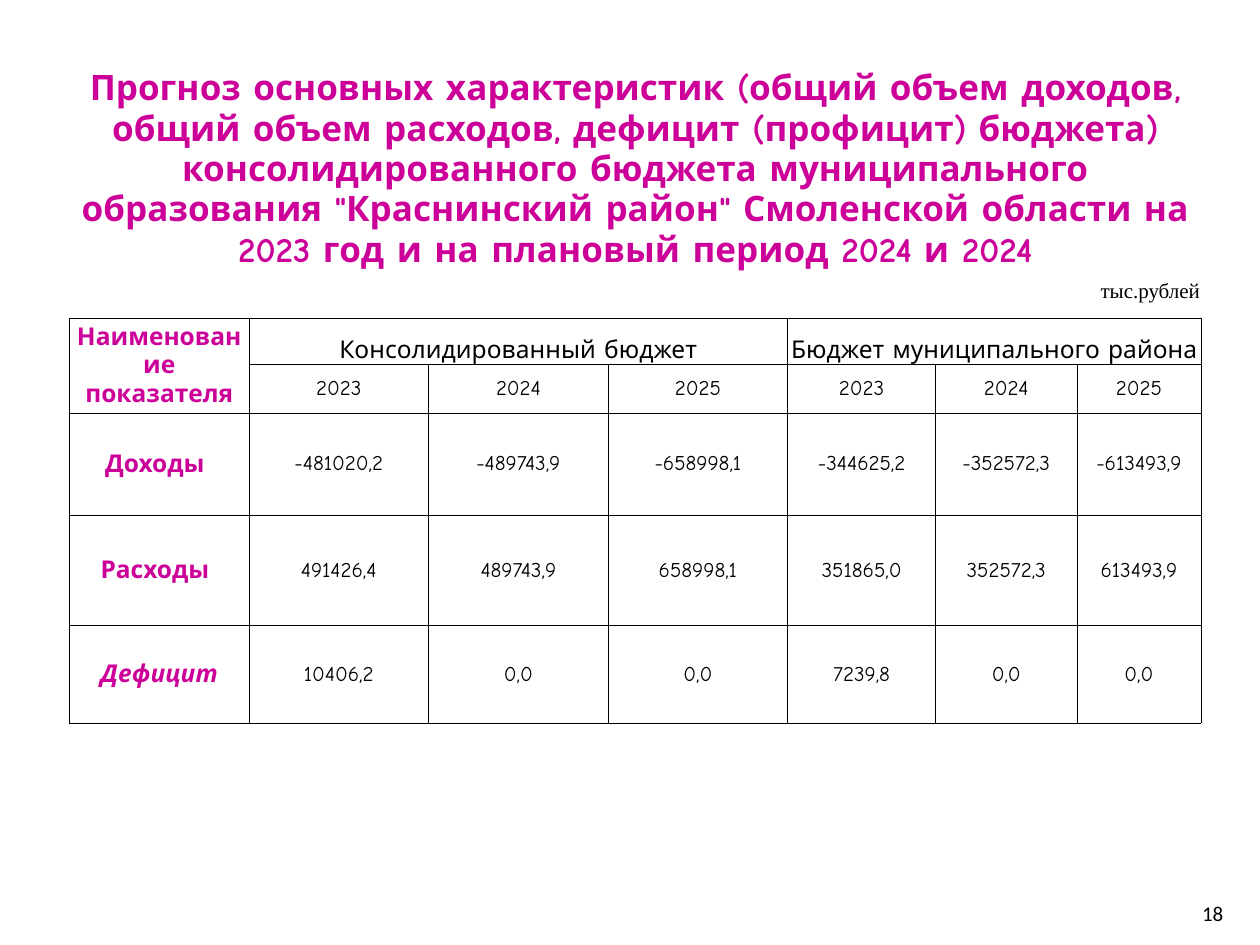
from lxml import etree
from pptx import Presentation
from pptx import util as u
from pptx.dml.color import RGBColor
from pptx.enum import text
from pptx.oxml.ns import qn

PINK, BLACK = "CC0099", "000000"
FONT = "Comic Neue"
TOP, MID, LOW = text.MSO_ANCHOR.TOP, text.MSO_ANCHOR.MIDDLE, text.MSO_ANCHOR.BOTTOM
MIDDLE, RIGHT = text.PP_ALIGN.CENTER, text.PP_ALIGN.RIGHT
WIDTHS = [3.62, 3.62, 3.62, 3.62, 2.98, 2.85, 2.5]
HEIGHTS = [3.56, 0.79, 0.92, 0.98, 2.06, 2.23, 1.96]
TITLE = ('Прогноз основных характеристик (общий объем доходов, общий объем расходов, '
         'дефицит (профицит) бюджета) консолидированного бюджета муниципального образования '
         '"Краснинский район" Смоленской области на 2023 год и на плановый период 2024 и 2024')
YEARS = ["2023", "2024", "2025"] * 2
DATA = [
    ("Доходы ", "-481020,2", "-489743,9", "-658998,1", "-344625,2", "-352572,3", "-613493,9"),
    ("Расходы ", "491426,4", "489743,9", "658998,1", "351865,0", "352572,3", "613493,9"),
    ("Дефицит", "10406,2", "0,0", "0,0", "7239,8", "0,0", "0,0"),
]


def paint(font, size, color, name=FONT, bold=False, slant=False):
    font.size, font.name = u.Pt(size), name
    font.bold, font.italic = bold, slant
    font.color.rgb = RGBColor.from_string(color)


def write(cell, words, size=12, color=BLACK, name=FONT, bold=False,
          slant=False, align=MIDDLE, anchor=MID):
    cell.text_frame.text = words
    cell.vertical_anchor = anchor
    para = cell.text_frame.paragraphs[0]
    para.alignment = align
    paint(para.runs[0].font, size, color, name, bold, slant)


def rule(cell, sides):
    props = cell._tc.get_or_add_tcPr()
    for spot, side in enumerate("LRTB"):
        line = etree.Element(qn("a:ln" + side), w=str(u.Pt(0.5)))
        if side in sides:
            fill = etree.SubElement(line, qn("a:solidFill"))
            etree.SubElement(fill, qn("a:srgbClr"), val=BLACK)
        else:
            etree.SubElement(line, qn("a:noFill"))
        props.insert(spot, line)


def grid(slide):
    frame = slide.shapes.add_table(len(HEIGHTS), len(WIDTHS), u.Cm(1.4), u.Cm(1.4),
                                   u.Cm(sum(WIDTHS)), u.Cm(sum(HEIGHTS)))
    table = frame.table
    table.first_row = table.horz_banding = False
    for col, wide in zip(table.columns, WIDTHS):
        col.width = u.Cm(wide)
    for num, (row, high) in enumerate(zip(table.rows, HEIGHTS)):
        row.height = u.Cm(high)
        for cell in row.cells:
            cell.fill.background()
            cell.margin_left = cell.margin_right = u.Cm(0.02)
            cell.margin_top = cell.margin_bottom = 0
            rule(cell, ["", "B"][num] if num < 2 else "LRTB")
    return table


def head(table):
    for first, last in [((0, 0), (0, 6)), ((2, 0), (3, 0)), ((2, 1), (2, 3)), ((2, 4), (2, 6))]:
        table.cell(*first).merge(table.cell(*last))
    write(table.cell(0, 0), TITLE, 20, PINK, bold=True, anchor=TOP)
    write(table.cell(1, 6), "тыс.рублей", name="Times New Roman", align=RIGHT, anchor=TOP)
    write(table.cell(2, 0), "Наименование показателя", 14, PINK, bold=True)
    write(table.cell(2, 1), "Консолидированный бюджет", 14, anchor=LOW)
    write(table.cell(2, 4), "Бюджет муниципального района", 14, anchor=LOW)
    for col, year in enumerate(YEARS, 1):
        write(table.cell(3, col), year)


def body(table):
    for row, (label, *sums) in enumerate(DATA, 4):
        write(table.cell(row, 0), label, 14, PINK, bold=True, slant=label == "Дефицит")
        for col, value in enumerate(sums, 1):
            write(table.cell(row, col), value)


def number(slide):
    box = slide.shapes.add_textbox(u.Cm(22.8), u.Cm(18.06), u.Cm(2.11), u.Cm(0.69))
    frame = box.text_frame
    frame.word_wrap = True
    frame.vertical_anchor = MID
    frame.text = "18"
    para = frame.paragraphs[0]
    para.alignment = RIGHT
    paint(para.runs[0].font, 12, BLACK, "Calibri")


def main():
    deck = Presentation()
    deck.slide_width, deck.slide_height = u.Cm(25.4), u.Cm(19.05)
    slide = deck.slides.add_slide(deck.slide_layouts[6])
    number(slide)
    table = grid(slide)
    head(table)
    body(table)
    deck.save("out.pptx")


if __name__ == "__main__":
    main()
